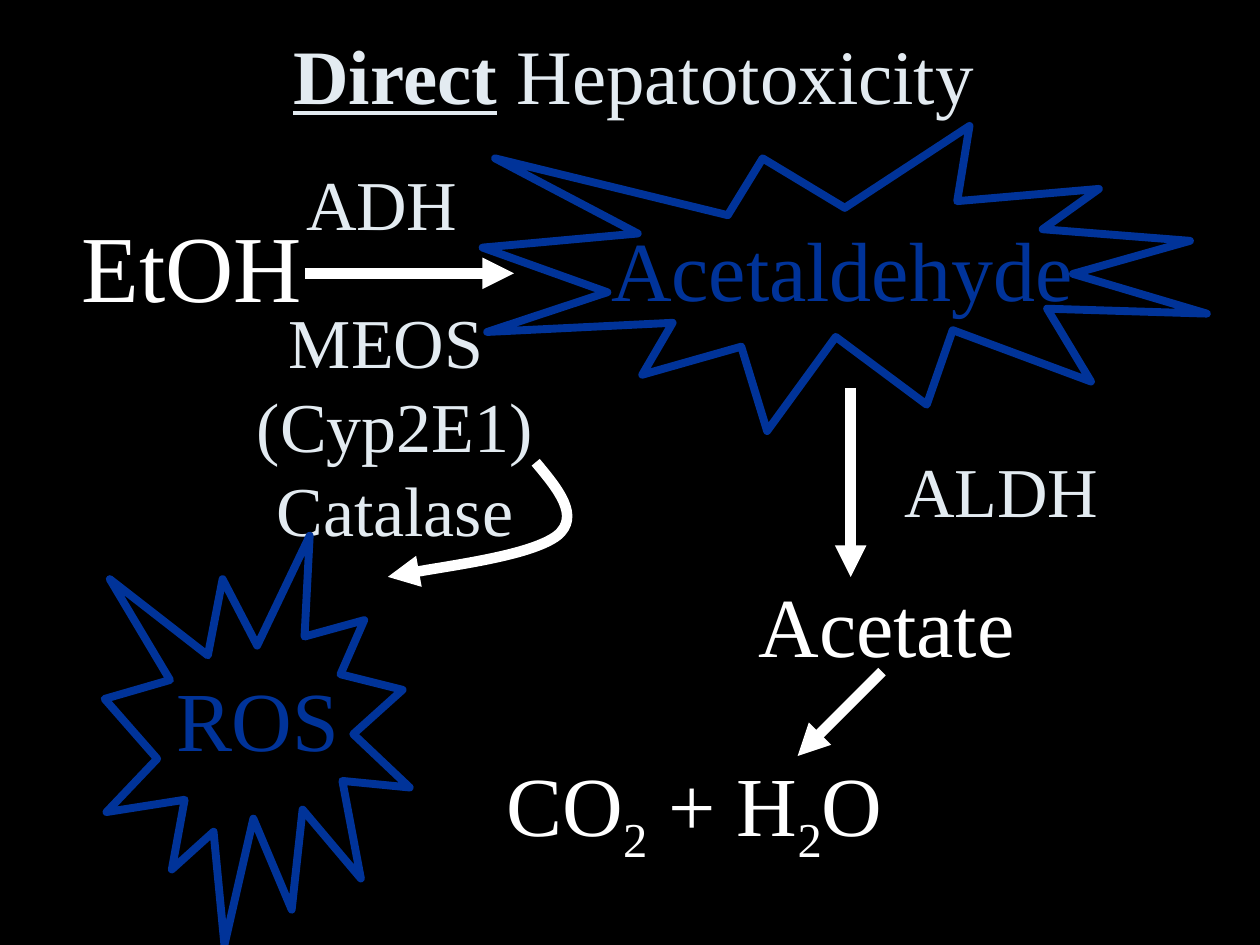
from lxml import etree
from pptx import Presentation
from pptx.dml.color import RGBColor
from pptx.enum.shapes import MSO_CONNECTOR, MSO_SHAPE
from pptx.enum.text import MSO_ANCHOR, MSO_AUTO_SIZE, PP_ALIGN
from pptx.oxml.ns import qn
from pptx.util import Cm, Pt

STRAIGHT = MSO_CONNECTOR.STRAIGHT
BURST = MSO_SHAPE.EXPLOSION1
TOP = MSO_ANCHOR.TOP
FIXED = MSO_AUTO_SIZE.NONE
LEFT, CENTER = PP_ALIGN.LEFT, PP_ALIGN.CENTER
TITLE_ONLY = 5

BLACK, WHITE, BLUE, PALE = "000000", "FFFFFF", "003399", "E3EBF1"


def color(value):
    return RGBColor.from_string(value)


class PathwaySlide:
    font = "Times New Roman"
    arrow_width = Pt(6)
    burst_width = Pt(4.5)

    def __init__(self, deck):
        self.slide = deck.slides.add_slide(deck.slide_layouts[TITLE_ONLY])
        self.shapes = self.slide.shapes
        fill = self.slide.background.fill
        fill.solid()
        fill.fore_color.rgb = color(BLACK)

    def fill_text(self, box, paragraphs, size, tint, align=LEFT):
        """Fill a box; each paragraph is a list of (text, font values) spans."""
        frame = box.text_frame
        layout = {"word_wrap": False, "auto_size": FIXED, "vertical_anchor": TOP}
        for name, value in layout.items():
            setattr(frame, name, value)
        for index, spans in enumerate(paragraphs):
            para = frame.add_paragraph() if index else frame.paragraphs[0]
            para.alignment = align
            for text, extra in spans:
                span = para.add_run()
                span.text = text
                values = {"name": self.font, "size": Pt(size), **extra}
                baseline = values.pop("baseline", None)
                for name, value in values.items():
                    setattr(span.font, name, value)
                span.font.color.rgb = color(tint)
                if baseline:
                    span.font._element.set("baseline", str(baseline))

    def title(self, place, spans, size, tint):
        box = self.shapes.title
        for name, value in zip(("left", "top", "width", "height"), place):
            setattr(box, name, Cm(value))
        self.fill_text(box, [spans], size, tint)

    def label(self, place, paragraphs, size, tint, align=LEFT):
        box = self.shapes.add_textbox(*map(Cm, place))
        self.fill_text(box, paragraphs, size, tint, align)

    def burst(self, place):
        shape = self.shapes.add_shape(BURST, *map(Cm, place))
        shape.shadow.inherit = False
        shape.fill.background()
        shape.line.color.rgb = color(BLUE)
        shape.line.width = self.burst_width

    def style_arrow(self, shape):
        shape.line.color.rgb = color(WHITE)
        shape.line.width = self.arrow_width
        outline = shape._element.spPr.find(qn("a:ln"))
        etree.SubElement(outline, qn("a:tailEnd"), type="triangle")

    def arrow(self, start, end):
        line = self.shapes.add_connector(STRAIGHT, *map(Cm, start + end))
        self.style_arrow(line)
        etree.SubElement(line._element.spPr, qn("a:effectLst"))

    def curved_arrow(self, start, *controls):
        """Draw Bezier curves; every three controls make one curve."""
        builder = self.shapes.build_freeform(*map(Cm, start))
        builder.add_line_segments([tuple(map(Cm, point)) for point in controls], close=False)
        shape = builder.convert_to_shape()
        shape.shadow.inherit = False
        shape.fill.background()
        self.style_arrow(shape)
        steps = list(shape._element.iter(qn("a:lnTo")))
        outline = steps[0].getparent()
        for first in range(0, len(steps), 3):
            curve = etree.SubElement(outline, qn("a:cubicBezTo"))
            for step in steps[first:first + 3]:
                curve.append(step[0])
                outline.remove(step)


def main():
    deck = Presentation()
    deck.slide_width, deck.slide_height = Cm(25.4), Cm(19.05)
    page = PathwaySlide(deck)
    page.title((5.66, 0.43, 14.25, 2.11),
               [("Direct", {"bold": True, "underline": True}), (" Hepatotoxicity", {})],
               44, PALE)

    subscript = {"baseline": -25000}
    water = [("CO", {}), ("2", subscript), (" + H", {}), ("2", subscript), ("O", {})]
    compounds = [
        ((1.4, 4.06, 4.95, 2.54), [("EtOH", {})], 54, WHITE),
        ((12.07, 4.27, 9.8, 2.29), [("Acetaldehyde", {})], 48, BLUE),
        ((15.04, 11.43, 5.66, 2.29), [("Acetate", {})], 48, WHITE),
        ((9.96, 15.04, 8.23, 2.29), water, 48, WHITE),
        ((3.3, 13.34, 3.81, 2.29), [("ROS", {})], 48, BLUE),
    ]
    for place, spans, size, tint in compounds:
        page.label(place, [spans], size, tint)

    enzymes = [
        ((5.92, 3.12, 3.56, 1.96), ["ADH"], LEFT),
        ((4.9, 5.89, 6.12, 5.38), ["MEOS ", "(Cyp2E1)", "Catalase"], CENTER),
        ((17.98, 8.89, 4.42, 1.96), ["ALDH"], LEFT),
    ]
    for place, names, align in enzymes:
        page.label(place, [[(name, {})] for name in names], 40, PALE, align)

    page.arrow((17.15, 7.82), (17.15, 11.63))
    page.curved_arrow((10.8, 9.32),
                      (11.25, 9.86), (11.71, 10.41), (11.23, 10.8),
                      (10.72, 11.18), (8.41, 11.51), (7.82, 11.63))
    page.burst((2.11, 10.8, 6.15, 8.25))
    page.arrow((17.78, 13.54), (16.08, 15.24))
    page.arrow((6.15, 5.51), (10.36, 5.51))
    page.burst((9.73, 2.54, 14.6, 6.15))

    deck.save("out.pptx")


if __name__ == "__main__":
    main()
